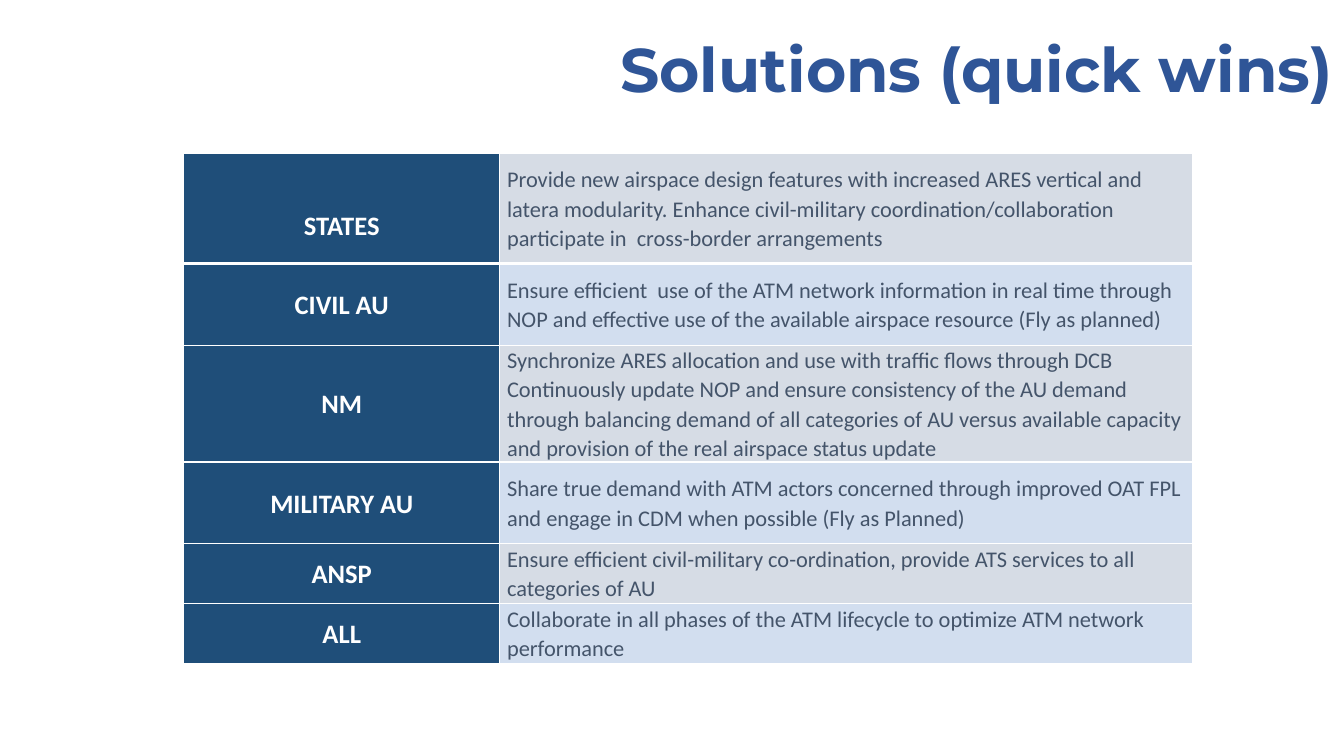
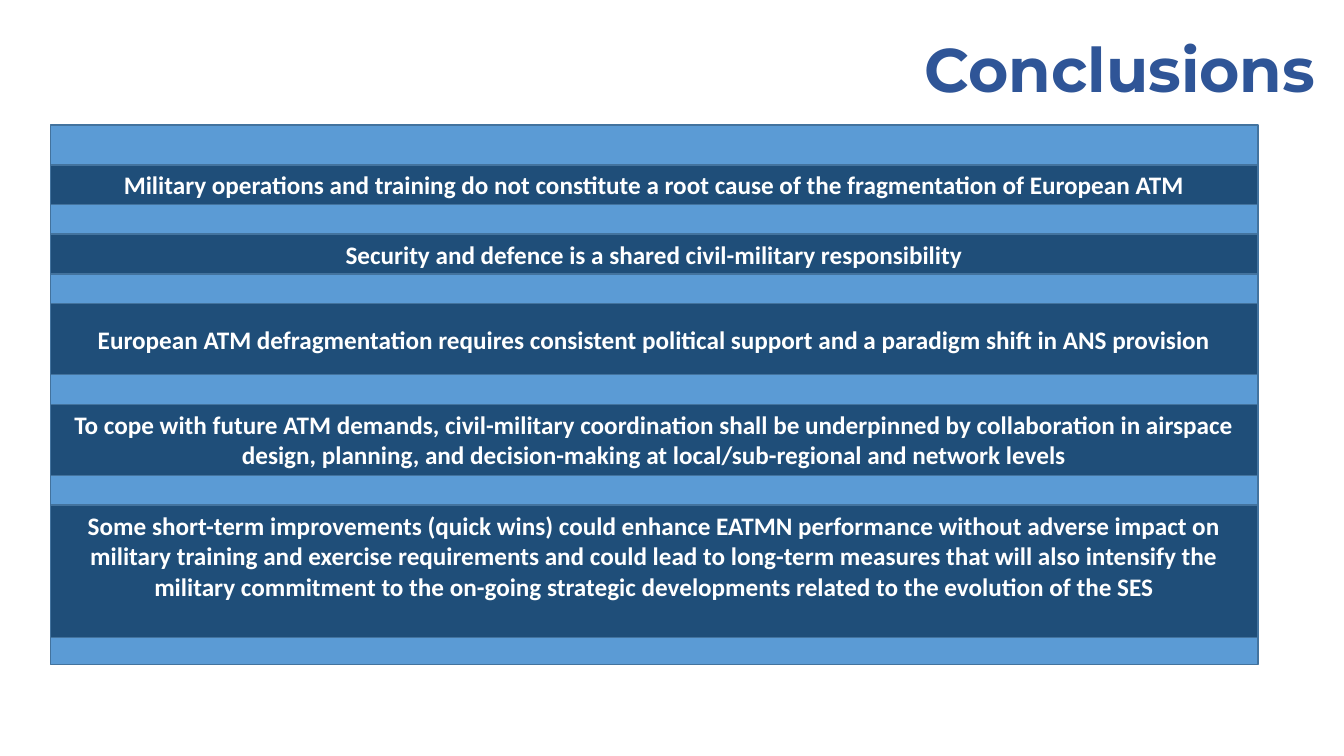
from lxml import etree
from pptx import Presentation
from pptx.dml.color import RGBColor
from pptx.enum.shapes import MSO_SHAPE
from pptx.enum.text import MSO_ANCHOR, PP_ALIGN
from pptx.oxml.ns import qn
from pptx.util import Emu, Pt

LEFT, CENTER, RIGHT = PP_ALIGN.LEFT, PP_ALIGN.CENTER, PP_ALIGN.RIGHT
MIDDLE = MSO_ANCHOR.MIDDLE
RECTANGLE = MSO_SHAPE.RECTANGLE

WHITE = RGBColor(0xFF, 0xFF, 0xFF)
TITLE_BLUE = RGBColor(0x2F, 0x55, 0x97)
NAVY = RGBColor(0x1F, 0x4E, 0x79)
SKY = RGBColor(0x5B, 0x9B, 0xD5)
OUTLINE = RGBColor(0x43, 0x73, 0x9E)
SLATE = RGBColor(0x44, 0x54, 0x6A)
ROW_FILLS = (RGBColor(0xD6, 0xDC, 0xE5), RGBColor(0xD2, 0xDE, 0xEF))

SOLUTIONS = [
    ("STATES", 105, "Provide new airspace design features with increased ARES vertical and latera "
     "modularity. Enhance civil-military coordination/collaboration participate in  "
     "cross-border arrangements"),
    ("CIVIL AU", 78, "Ensure efficient  use of the ATM network information in real time through NOP "
     "and effective use of the available airspace resource (Fly as planned)"),
    ("NM", 111, "Synchronize ARES allocation and use with traffic flows through DCB Continuously "
     "update NOP and ensure consistency of the AU demand through balancing demand of all "
     "categories of AU versus available capacity and provision of the real airspace status update"),
    ("MILITARY AU", 78, "Share true demand with ATM actors concerned through improved OAT FPL and "
     "engage in CDM when possible (Fly as Planned)"),
    ("ANSP", 57, "Ensure efficient civil-military co-ordination, provide ATS services to all "
     "categories of AU"),
    ("ALL", 57, "Collaborate in all phases of the ATM lifecycle to optimize ATM network performance"),
]

CONCLUSIONS = [
    (38, 5, "Military operations and training do not constitute a root cause of the fragmentation "
     "of European ATM"),
    (38, 5, "Security and defence is a shared civil-military responsibility"),
    (68, 5, "European ATM defragmentation requires consistent political support and a paradigm "
     "shift in ANS provision"),
    (68, 5, "To cope with future ATM demands, civil-military coordination shall be underpinned by "
     "collaboration in airspace design, planning, and decision-making at local/sub-regional and "
     "network levels"),
    (126, 34, "Some short-term improvements (quick wins) could enhance EATMN performance without "
     "adverse impact on military training and exercise requirements and could lead to long-term "
     "measures that will also intensify the military commitment to the on-going strategic "
     "developments related to the evolution of the SES"),
]


def px(length):
    return Emu(length * 9525)


class Deck:
    """Draws the deck's titles, panels and tables on the current slide."""

    def __init__(self):
        self.presentation = Presentation()
        self.presentation.slide_width = px(1280)
        self.presentation.slide_height = px(720)
        self.slide = None

    def set_text(self, frame, text, size, color, align, bold=True, font="Calibri", spacing=1.0):
        paragraph = frame.paragraphs[0]
        paragraph.text = text
        paragraph.alignment = align
        paragraph.line_spacing = spacing
        paragraph.font.name = font
        paragraph.font.size = Pt(size)
        paragraph.font.bold = bold
        paragraph.font.color.rgb = color

    def add_slide(self, title):
        self.slide = self.presentation.slides.add_slide(self.presentation.slide_layouts[6])
        box = self.slide.shapes.add_textbox(px(175), px(0), px(1104), px(139))
        frame = box.text_frame
        frame.word_wrap = True
        frame.vertical_anchor = MIDDLE
        self.set_text(frame, title, 44, TITLE_BLUE, RIGHT, font="Montserrat", spacing=0.9)

    def panel(self, left, top, width, height, fill, text="", bottom_inset=5):
        shape = self.slide.shapes.add_shape(RECTANGLE, px(left), px(top), px(width), px(height))
        shape.shadow.inherit = False
        shape.fill.solid()
        shape.fill.fore_color.rgb = fill
        shape.line.color.rgb = OUTLINE
        shape.line.width = Pt(1)
        if text:
            frame = shape.text_frame
            frame.word_wrap = True
            frame.vertical_anchor = MIDDLE
            frame.margin_bottom = px(bottom_inset)
            self.set_text(frame, text, 18, WHITE, CENTER)

    def style_cell(self, cell, fill, bottom_border, top_inset=0):
        properties = cell._tc.get_or_add_tcPr()
        for side, width in (("lnL", 1), ("lnR", 1), ("lnT", 1), ("lnB", bottom_border)):
            border = etree.SubElement(properties, qn(f"a:{side}"), w=str(Pt(width)))
            solid = etree.SubElement(border, qn("a:solidFill"))
            etree.SubElement(solid, qn("a:srgbClr"), val=str(WHITE))
        cell.fill.solid()
        cell.fill.fore_color.rgb = fill
        cell.vertical_anchor = MIDDLE
        cell.margin_left = cell.margin_right = px(7)
        cell.margin_top, cell.margin_bottom = px(top_inset), px(0)

    def table(self, left, top, widths, rows):
        height = sum(row_height for _, row_height, _ in rows)
        frame = self.slide.shapes.add_table(
            len(rows), len(widths), px(left), px(top), px(sum(widths)), px(height))
        table = frame.table
        table.first_row = table.horz_banding = False
        for column, width in zip(table.columns, widths):
            column.width = px(width)
        for index, (actor, row_height, action) in enumerate(rows):
            table.rows[index].height = px(row_height)
            first = index == 0
            bottom_border = 3 if first else 1
            actor_cell, action_cell = table.cell(index, 0), table.cell(index, 1)
            self.style_cell(actor_cell, NAVY, bottom_border, 33 if first else 0)
            self.style_cell(action_cell, ROW_FILLS[index % 2], bottom_border)
            self.set_text(actor_cell.text_frame, actor, 19, WHITE, CENTER, spacing=1.07)
            self.set_text(action_cell.text_frame, action, 16, SLATE, LEFT, bold=False, spacing=1.07)

    def stack(self, left, top, width, gap, bars):
        for height, bottom_inset, text in bars:
            self.panel(left, top, width, height, NAVY, text, bottom_inset)
            top += height + gap


def main():
    deck = Deck()
    deck.add_slide("Solutions (quick wins)")
    deck.table(175, 146, (301, 660), SOLUTIONS)
    deck.add_slide("Conclusions ")
    deck.panel(48, 119, 1150, 514, SKY)
    deck.stack(48, 157, 1150, 28, CONCLUSIONS)
    deck.presentation.save("out.pptx")


if __name__ == "__main__":
    main()
